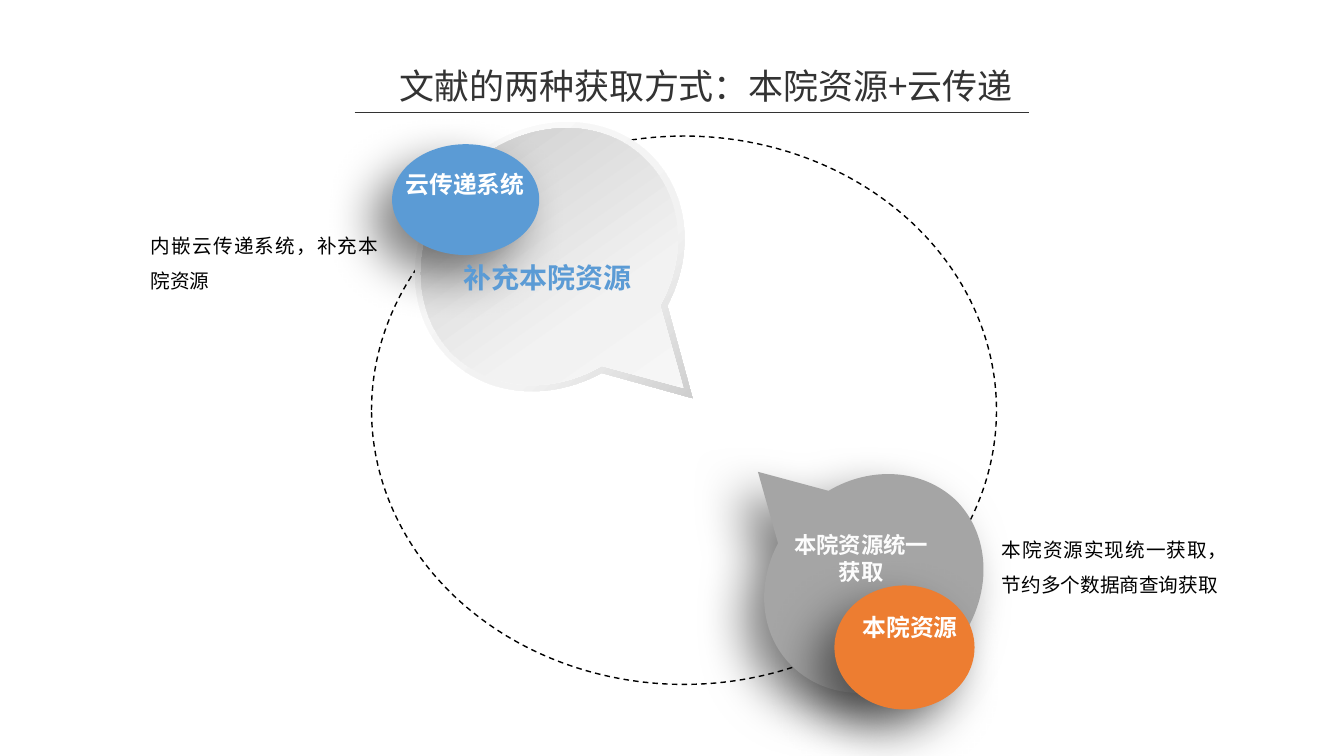
"""Build a slide on the two ways of obtaining literature."""
import math
from dataclasses import dataclass
from typing import Optional

from lxml import etree
from pptx import Presentation
from pptx.dml.color import RGBColor
from pptx.enum import dml, shapes, text
from pptx.oxml import ns, parse_xml
from pptx.util import Pt

CJK_FONT = "Noto Sans CJK SC"


@dataclass(frozen=True)
class Gradient:
    stops: tuple[tuple[int, str], ...]
    angle: int


@dataclass(frozen=True)
class Bubble:
    left: float
    top: float
    width: float
    height: float
    rotation: int
    outlines: tuple
    color: str = ""
    gradient: Optional[Gradient] = None


@dataclass(frozen=True)
class Oval:
    left: float
    top: float
    width: float
    height: float
    color: str


@dataclass(frozen=True)
class Label:
    words: str
    left: float
    top: float
    width: float
    height: float
    size: float
    color: str
    bold: bool = False
    inset: bool = False
    body: bool = False
    font: str = "Arial"


TAIL_BUBBLE = (
    (541.4, 337), (591.8, 350.6),
    (622.1, 332.6, 659.5, 334.8, 683.3, 357.8),
    (711.4, 386.6, 708.5, 435.6, 676.1, 468.7),
    (643.7, 501.1, 594, 504, 565.2, 475.2),
    (542.9, 452.9, 540, 417.6, 555.8, 388.1),
)
RIM_INSIDE = (
    (416.9, 262.8), (382.3, 253.4), (463.7, 172.1), (473, 204.5),
    (484.6, 174.2, 480.2, 140.4, 457.9, 118.1),
    (426.2, 86.4, 371.5, 90, 335.5, 126),
    (299.5, 162, 295.9, 216.7, 327.6, 248.4),
    (350.6, 271.4, 385.2, 275.8, 416.9, 262.8),
)
RIM_OUTSIDE = (
    (494.6, 284.4), (429.8, 266.4),
    (392.4, 286.6, 348.5, 283.7, 320.4, 255.6),
    (285.1, 220.3, 289.4, 159.8, 329, 120.2),
    (369.4, 79.9, 429.8, 76.3, 465.1, 110.9),
    (492.5, 139, 496.1, 181.4, 476.6, 218.2),
)
FACE = (
    (488.2, 277.2), (429.8, 261.4),
    (394.6, 282.2, 350.6, 279.4, 323.3, 252.7),
    (290.2, 218.9, 293.8, 160.6, 331.9, 122.4),
    (370.1, 85, 428.4, 80.6, 461.5, 114.5),
    (488.2, 141.1, 491, 183.6, 471.6, 218.2),
)
GRAY_BUBBLE = Bubble(526.3, 308.2, 166.3, 187.9, 315, (TAIL_BUBBLE,), color="A5A5A5")
PALE_BUBBLE = (
    Bubble(309.6, 85.7, 204.5, 233.3, 135, (RIM_INSIDE, RIM_OUTSIDE), gradient=Gradient(
        ((0, "FFFFFF"), (55, "F2F2F2"), (100, "A6A6A6")), 45)),
    Bubble(311.8, 90.7, 195.1, 219.6, 135, (FACE,), gradient=Gradient(
        ((0, "FFFFFF"), (43, "F2F2F2"), (100, "BFBFBF")), 235)),
)
TITLE = Label("文献的两种获取方式：本院资源+云传递", 218.9, 42.5, 571, 37.4, 25, "333333",
              inset=True, font=CJK_FONT)
BADGES = (
    (Oval(280.1, 103, 105.1, 79.2, "5B9BD5"),
     Label("云传递系统", 282.5, 121.4, 99.4, 20.9, 17, "FFFFFF", bold=True)),
    (Oval(596, 418.2, 100.1, 88.6, "ED7D31"),
     Label("本院资源", 602.6, 437.8, 95, 51.8, 17, "FFFFFF", bold=True)),
)
LABELS = (
    Label("内嵌云传递系统，补充本院资源", 107.7, 158.4, 162.7, 48.2, 14, "000000", body=True),
    Label("本院资源实现统一获取，节约多个数据商查询获取", 715.7, 375.8, 161.3, 48.2, 14,
          "000000", body=True),
    Label("补充本院资源", 294.2, 182.2, 194.4, 31.7, 20, "5B9BD5", bold=True, inset=True),
    Label("本院资源统一\n获取", 535.3, 375.8, 159.8, 46.1, 16, "FCFCFC", bold=True, inset=True),
)


def rgb(value: str) -> RGBColor:
    return RGBColor.from_string(value)


def add_color(parent, value: str):
    color = etree.SubElement(parent, ns.qn("a:srgbClr"))
    color.set("val", value)
    return color


def finish(shape, color: str) -> None:
    shape.fill.solid()
    shape.fill.fore_color.rgb = rgb(color)
    effects = shape._element.spPr.find(ns.qn("a:effectLst"))
    shadow = etree.SubElement(effects, ns.qn("a:outerShdw"))
    settings = {"blurRad": Pt(35), "dist": Pt(20), "dir": 135 * 60000, "rotWithShape": 0}
    for name, value in settings.items():
        shadow.set(name, str(int(value)))
    etree.SubElement(add_color(shadow, "000000"), ns.qn("a:alpha")).set("val", "50000")


def apply_gradient(shape, gradient: Gradient) -> None:
    shape.fill.background()
    properties = shape._element.spPr
    fill = parse_xml(f'<a:gradFill {ns.nsdecls("a")} rotWithShape="0"><a:gsLst/>'
                     f'<a:lin ang="{gradient.angle * 60000}" scaled="0"/></a:gradFill>')
    for position, color in gradient.stops:
        stop = etree.SubElement(fill[0], ns.qn("a:gs"))
        stop.set("pos", str(position * 1000))
        add_color(stop, color)
    properties.replace(properties.find(ns.qn("a:noFill")), fill)


def to_frame(bubble: Bubble, x: float, y: float) -> tuple[int, int]:
    turn = math.radians(-bubble.rotation)
    across = x - bubble.left - bubble.width / 2
    down = y - bubble.top - bubble.height / 2
    return (Pt(across * math.cos(turn) - down * math.sin(turn) + bubble.width / 2),
            Pt(across * math.sin(turn) + down * math.cos(turn) + bubble.height / 2))


def draw_outlines(shape, bubble: Bubble) -> None:
    track = shape._element.spPr.find(".//" + ns.qn("a:path"))
    for child in list(track):
        track.remove(child)
    for outline in bubble.outlines:
        for index, step in enumerate(outline):
            kind = "moveTo" if index == 0 else "lnTo" if len(step) == 2 else "cubicBezTo"
            command = etree.SubElement(track, ns.qn(f"a:{kind}"))
            for x, y in zip(step[::2], step[1::2]):
                point = etree.SubElement(command, ns.qn("a:pt"))
                for name, value in zip("xy", to_frame(bubble, x, y)):
                    point.set(name, str(int(value)))
        etree.SubElement(track, ns.qn("a:close"))


def draw_bubble(page, bubble: Bubble):
    left, top = Pt(bubble.left), Pt(bubble.top)
    right, bottom = left + Pt(bubble.width), top + Pt(bubble.height)
    builder = page.shapes.build_freeform(left, top)
    builder.add_line_segments([(right, top), (right, bottom), (left, bottom)], close=True)
    shape = builder.convert_to_shape()
    draw_outlines(shape, bubble)
    shape.rotation = bubble.rotation
    shape.line.fill.background()
    shape.shadow.inherit = False
    if bubble.gradient:
        apply_gradient(shape, bubble.gradient)
    else:
        finish(shape, bubble.color)
    return shape


def draw_oval(page, oval: Oval):
    shape = page.shapes.add_shape(shapes.MSO_SHAPE.OVAL, Pt(oval.left), Pt(oval.top),
                                  Pt(oval.width), Pt(oval.height))
    shape.shadow.inherit = False
    shape.line.fill.background()
    finish(shape, oval.color)
    return shape


def draw_label(page, label: Label):
    box = page.shapes.add_textbox(Pt(label.left), Pt(label.top), Pt(label.width), Pt(label.height))
    frame = box.text_frame
    frame.word_wrap, frame.auto_size = True, text.MSO_AUTO_SIZE.SHAPE_TO_FIT_TEXT
    if not label.inset:
        frame.margin_left = frame.margin_right = frame.margin_top = frame.margin_bottom = 0
    frame.text = label.words
    for para in frame.paragraphs:
        para.alignment = text.PP_ALIGN.JUSTIFY if label.body else text.PP_ALIGN.CENTER
        if label.body:
            para.line_spacing = 1.5
        for span in para.runs:
            span.font.size, span.font.bold, span.font.name = Pt(label.size), label.bold, label.font
            span.font.color.rgb = rgb(label.color)
            etree.SubElement(span.font._element, ns.qn("a:ea")).set("typeface", CJK_FONT)
    return box


def draw_frame(page) -> None:
    rule = page.shapes.add_connector(shapes.MSO_CONNECTOR.STRAIGHT, Pt(253.4), Pt(80.2), Pt(735.1), Pt(80.2))
    rule.line.color.rgb, rule.line.width = rgb("333333"), Pt(0.75)
    etree.SubElement(rule._element.spPr, ns.qn("a:effectLst"))
    orbit = page.shapes.add_shape(shapes.MSO_SHAPE.OVAL, Pt(265.4), Pt(97.2), Pt(446.4), Pt(391.7))
    orbit.shadow.inherit = False
    orbit.fill.background()
    orbit.line.color.rgb, orbit.line.width = rgb("000000"), Pt(1)
    orbit.line.dash_style = dml.MSO_LINE.DASH


def main() -> None:
    deck = Presentation()
    deck.slide_width, deck.slide_height = Pt(960), Pt(540)
    page = deck.slides.add_slide(deck.slide_layouts[6])
    draw_label(page, TITLE)
    draw_frame(page)
    draw_bubble(page, GRAY_BUBBLE)
    page.shapes.add_group_shape([draw_bubble(page, bubble) for bubble in PALE_BUBBLE])
    for oval, label in BADGES:
        page.shapes.add_group_shape([draw_oval(page, oval), draw_label(page, label)])
    for label in LABELS:
        draw_label(page, label)
    deck.save("out.pptx")


if __name__ == "__main__":
    main()
